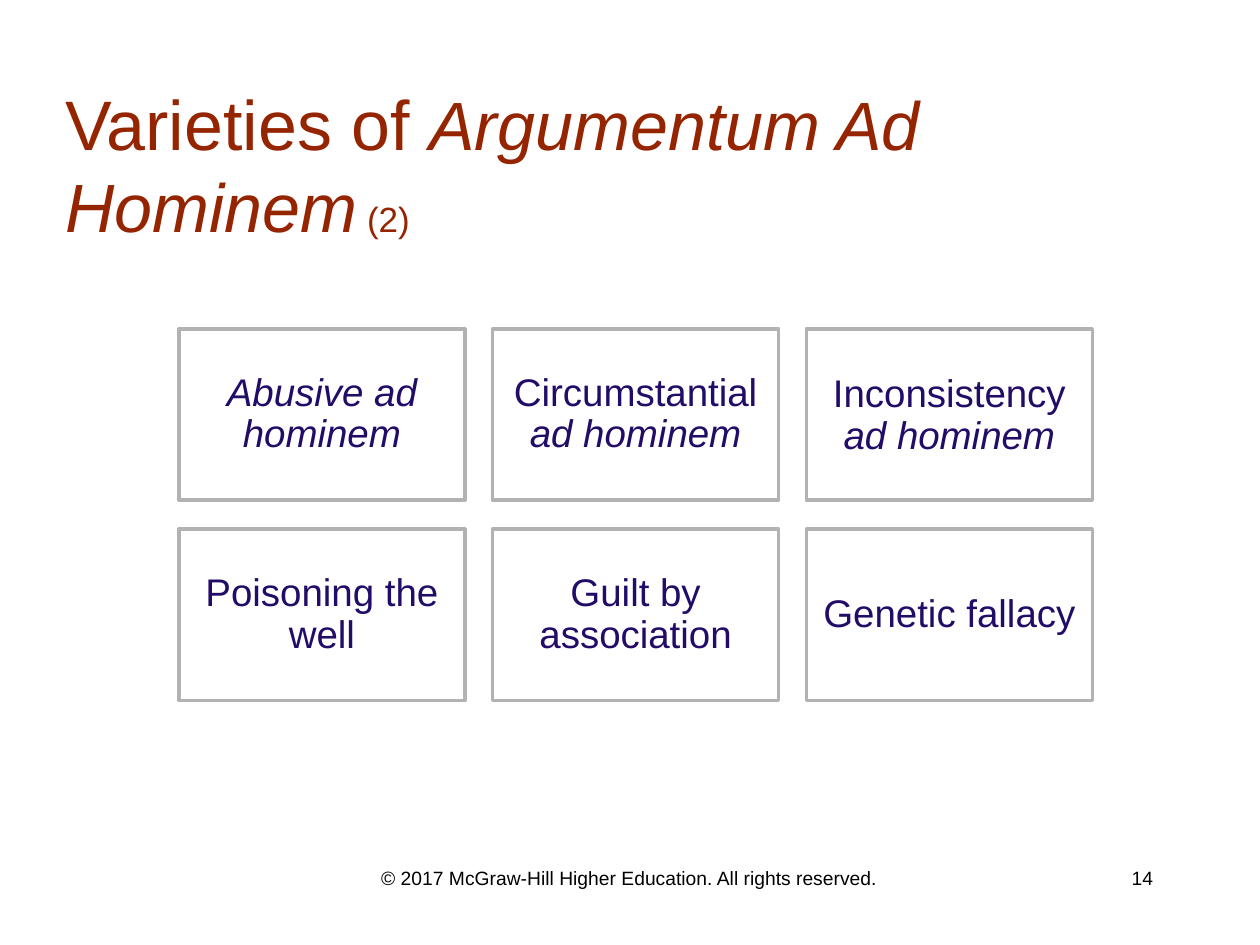
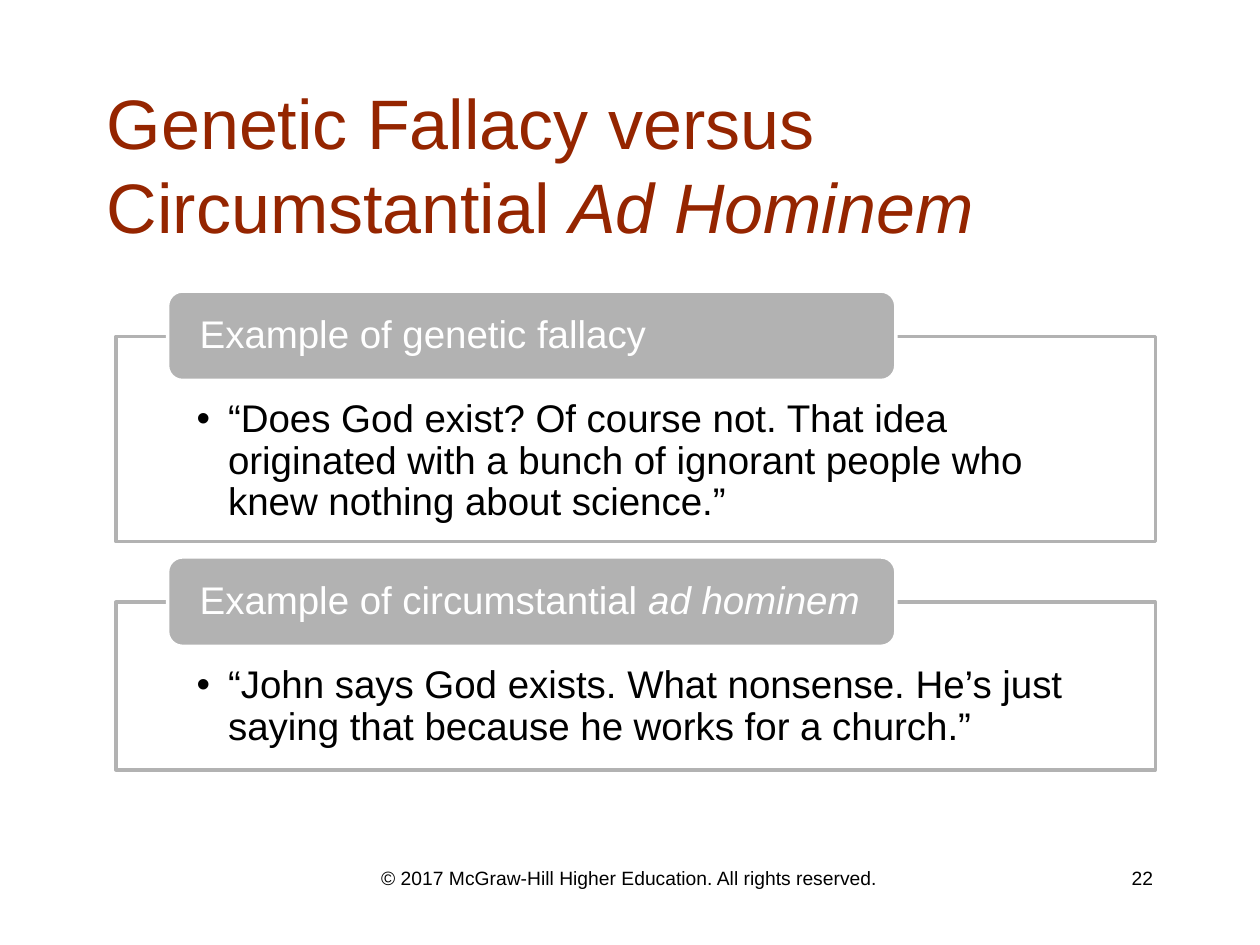
from lxml import etree
from pptx import Presentation
from pptx.dml.color import RGBColor
from pptx.enum.shapes import MSO_SHAPE as Shape
from pptx.enum.text import MSO_ANCHOR as Anchor, PP_ALIGN as Align
from pptx.oxml.ns import qn
from pptx.util import Inches, Pt

FONT = "Arial"
RUST, NAVY, GRAY, WHITE, BLACK = "952500", "230C68", "B2B2B2", "FFFFFF", "000000"
ITALIC = {"italic": True}
COPYRIGHT = "© 2017 McGraw-Hill Higher Education. All rights reserved."

# A text is a list of runs: (words, format that differs from the box).
VARIETIES = {
    "number": 14,
    "title": [
        ("Varieties of ", {}),
        ("Argumentum Ad Hominem", {"size": 39, "italic": True}),
        (" (2)", {"size": 20}),
    ],
    "title_left": 0.42,
    "title_width": 8.83,
    "cards": [
        [("Abusive ad hominem", ITALIC)],
        [("Circumstantial ", {}), ("ad hominem", ITALIC)],
        [("Inconsistency", {}), (" ", {"size": 24}), ("ad hominem", ITALIC)],
        [("Poisoning the well", {})],
        [("Guilt by association", {})],
        [("Genetic fallacy", {})],
    ],
}
COMPARISON = {
    "number": 22,
    "title": [("Genetic Fallacy versus Circumstantial ", {}), ("Ad Hominem", ITALIC)],
    "title_left": 0.75,
    "title_width": 8.5,
    "examples": [
        ([("Example of genetic fallacy", {})],
         "“Does God exist? Of course not. That idea originated with a bunch of "
         "ignorant people who knew nothing about science.”", 1.63),
        ([("Example of circumstantial", {}), (" ad hominem", ITALIC)],
         "“John says God exists. What nonsense. He’s just saying that because "
         "he works for a church.”", 1.33),
    ],
}

COLUMNS = 3
CARD_LEFT, CARD_TOP = 1.42, 2.61
CARD_WIDTH, CARD_HEIGHT = 2.27, 1.36
CARD_STEP_X, CARD_STEP_Y = 2.49, 1.59

FIRST_HEADER_TOP, HEADER_HEIGHT, HEADER_RISE = 2.31, 0.71, 0.36
EXAMPLE_GAP = 0.12


def color(hex_string):
    return RGBColor.from_string(hex_string)


def add_bullet(paragraph, indent):
    properties = paragraph._p.get_or_add_pPr()
    properties.set("marL", str(Inches(indent)))
    properties.set("indent", str(-Inches(indent)))
    etree.SubElement(properties, qn("a:buFont")).set("typeface", FONT)
    etree.SubElement(properties, qn("a:buChar")).set("char", "•")


def write(shape, runs, *, size=22, text_color=BLACK, align=Align.LEFT, anchor=Anchor.MIDDLE,
          insets=(0.1, 0.05, 0.1, 0.05), line_spacing=None, bullet_indent=None):
    """Fill a shape with one paragraph, given as a string or a list of runs."""
    frame = shape.text_frame
    frame.word_wrap = True
    frame.vertical_anchor = anchor
    frame.margin_left, frame.margin_top, frame.margin_right, frame.margin_bottom = map(Inches, insets)
    paragraph = frame.paragraphs[0]
    paragraph.alignment = align
    if line_spacing:
        paragraph.line_spacing = line_spacing
    if bullet_indent:
        add_bullet(paragraph, bullet_indent)
    for words, changes in [(runs, {})] if isinstance(runs, str) else runs:
        run = paragraph.add_run()
        run.text = words
        run.font.name = FONT
        run.font.size = Pt(changes.get("size", size))
        run.font.italic = changes.get("italic", False)
        run.font.color.rgb = color(text_color)


def add_text(slide, box, runs, **text_format):
    write(slide.shapes.add_textbox(*map(Inches, box)), runs, **text_format)


def add_box(slide, kind, box, fill, line, runs, **text_format):
    shape = slide.shapes.add_shape(kind, *map(Inches, box))
    shape.shadow.inherit = False
    shape.fill.solid()
    shape.fill.fore_color.rgb = color(fill)
    shape.line.color.rgb = color(line)
    shape.line.width = Pt(2)
    write(shape, runs, line_spacing=0.9, **text_format)


def add_base_slide(presentation, content):
    """Add a slide with its title, copyright line and page number."""
    slide = presentation.slides.add_slide(presentation.slide_layouts[6])
    title_box = (content["title_left"], 0.67, content["title_width"], 1.25)
    add_text(slide, title_box, content["title"], size=40, text_color=RUST)
    footer = {"size": 11, "anchor": Anchor.TOP}
    add_text(slide, (2.58, 6.83, 4.83, 0.5), COPYRIGHT, align=Align.CENTER, **footer)
    add_text(slide, (7.17, 6.83, 2.08, 0.5), str(content["number"]), align=Align.RIGHT, **footer)
    return slide


def add_cards(slide, cards):
    for index, runs in enumerate(cards):
        row, column = divmod(index, COLUMNS)
        box = (CARD_LEFT + column * CARD_STEP_X, CARD_TOP + row * CARD_STEP_Y,
               CARD_WIDTH, CARD_HEIGHT)
        add_box(slide, Shape.RECTANGLE, box, WHITE, GRAY, runs,
                text_color=NAVY, align=Align.CENTER, insets=(0.09,) * 4)


def add_examples(slide, examples):
    header_top = FIRST_HEADER_TOP
    for header, quote, panel_height in examples:
        panel_top = header_top + HEADER_RISE
        add_box(slide, Shape.RECTANGLE, (0.92, panel_top, 8.25, panel_height), WHITE, GRAY, quote,
                anchor=Anchor.TOP, insets=(0.64, 0.5, 0.64, 0.17), bullet_indent=0.25)
        add_box(slide, Shape.ROUNDED_RECTANGLE, (1.33, header_top, 5.78, HEADER_HEIGHT),
                GRAY, WHITE, header, text_color=WHITE, insets=(0.22, 0, 0.22, 0))
        header_top = panel_top + panel_height + EXAMPLE_GAP


def main():
    presentation = Presentation()
    presentation.slide_width, presentation.slide_height = Inches(10), Inches(7.5)
    add_cards(add_base_slide(presentation, VARIETIES), VARIETIES["cards"])
    add_examples(add_base_slide(presentation, COMPARISON), COMPARISON["examples"])
    presentation.save("out.pptx")


if __name__ == "__main__":
    main()
